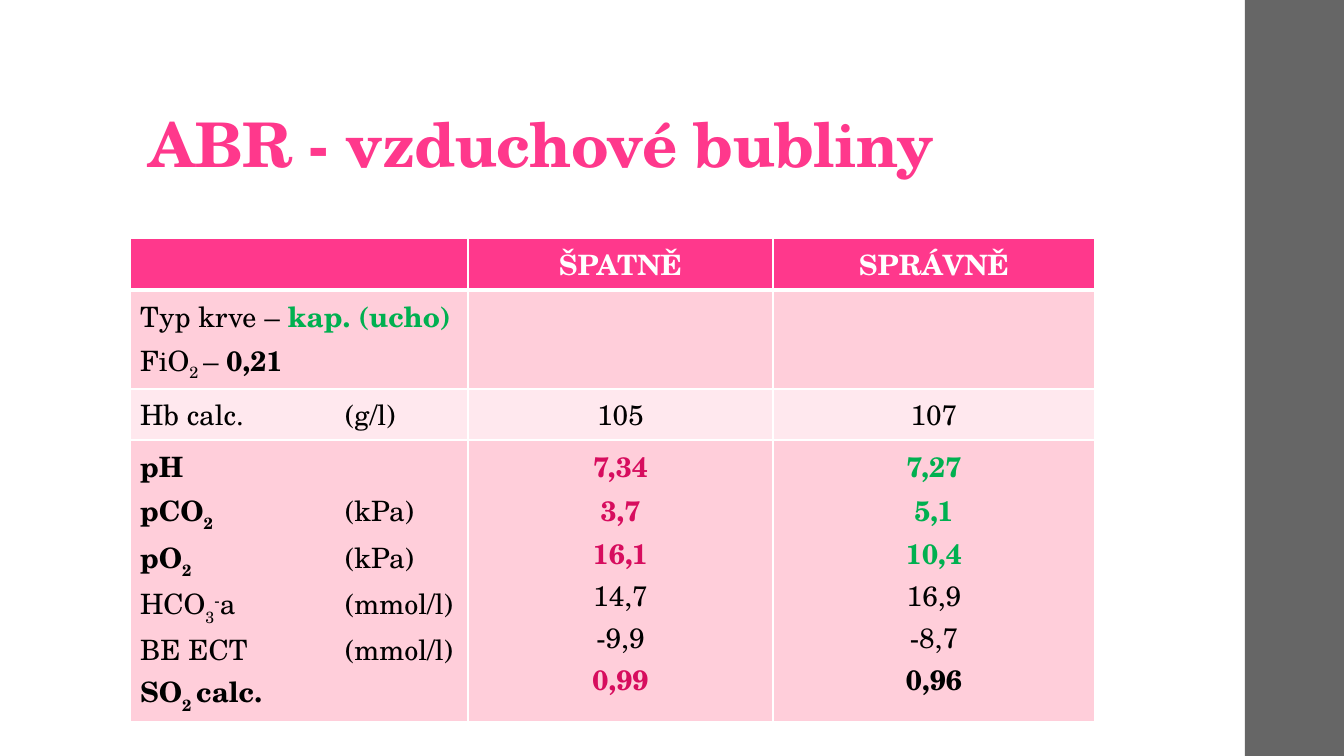
from dataclasses import dataclass

import lxml.etree
import pptx
import pptx.dml.color
import pptx.enum.shapes
import pptx.enum.text
import pptx.oxml.ns
import pptx.util

ALIGN = pptx.enum.text.PP_ALIGN
ANCHOR = pptx.enum.text.MSO_ANCHOR
qn = pptx.oxml.ns.qn


@dataclass(frozen=True)
class Theme:
    font: str = "TeX Gyre Schola"
    pink: str = "FF388C"
    rose: str = "FFCEDA"
    pale: str = "FFE8EE"
    red: str = "D70D5E"
    green: str = "00B050"
    black: str = "000000"
    white: str = "FFFFFF"
    grey: str = "666666"
    title: int = 44
    body: int = 20


THEME = Theme()


@dataclass(frozen=True)
class Span:
    text: str
    bold: bool = False
    color: str = THEME.black
    base: int = 0


@dataclass(frozen=True)
class Row:
    height: int
    fill: str
    cells: list[list[list[Span]]]


def px(count: int) -> int:
    return round(count * 914400 / 100.8)


def rgb(code: str) -> pptx.dml.color.RGBColor:
    return pptx.dml.color.RGBColor.from_string(code)


def assign(target: object, values: dict) -> None:
    for name, value in values.items():
        setattr(target, name, value)


def sub(text: str, bold: bool = False) -> Span:
    return Span(text, bold, base=-30)


def strong(text: str, color: str = THEME.black) -> Span:
    return Span(text, True, color)


def fill_line(line, spans: list[Span], size: int) -> None:
    for span in spans:
        if span.text == "\n":
            line.add_line_break()
            continue
        run = line.add_run()
        run.text = span.text
        assign(run.font, {"name": THEME.font, "size": pptx.util.Pt(size), "bold": span.bold})
        run.font.color.rgb = rgb(span.color)
        if span.base:
            run.font._element.set("baseline", str(span.base * 1000))


def add_tab(line, stop: int) -> None:
    tabs = lxml.etree.SubElement(line._p.get_or_add_pPr(), qn("a:tabLst"))
    lxml.etree.SubElement(tabs, qn("a:tab"), pos=str(px(stop)), algn="l")


def add_edges(cell, widths: dict[str, int]) -> None:
    """Draw the cell's white borders, with widths in points by side."""
    props = cell._tc.get_or_add_tcPr()
    for place, (side, width) in enumerate(widths.items()):
        edge = lxml.etree.Element(qn(f"a:ln{side}"), w=str(pptx.util.Pt(width)))
        paint = lxml.etree.SubElement(edge, qn("a:solidFill"))
        lxml.etree.SubElement(paint, qn("a:srgbClr"), val=THEME.white)
        props.insert(place, edge)


def add_band(slide) -> None:
    kind = pptx.enum.shapes.MSO_SHAPE.RECTANGLE
    band = slide.shapes.add_shape(kind, px(1245), 0, px(99), px(756))
    band.shadow.inherit = False
    band.fill.solid()
    band.fill.fore_color.rgb = rgb(THEME.grey)
    band.line.fill.background()


def add_title(slide, text: str) -> None:
    frame = slide.shapes.add_textbox(px(139), px(29), px(1068), px(157)).text_frame
    assign(frame, {
        "word_wrap": True, "vertical_anchor": ANCHOR.BOTTOM,
        "margin_left": px(10), "margin_right": px(10),
        "margin_top": px(3), "margin_bottom": px(5),
    })
    line = frame.paragraphs[0]
    line.line_spacing = 0.9
    fill_line(line, [strong(text, THEME.pink)], THEME.title)
    line.runs[0].font._element.set("spc", "-50")


def add_grid(slide, widths: list[int], rows: list[Row]) -> None:
    high = sum(row.height for row in rows)
    grid = slide.shapes.add_table(
        len(rows), len(widths), px(130), px(238), px(sum(widths)), px(high)).table
    assign(grid, {"first_row": False, "horz_banding": False})
    for col, width in zip(grid.columns, widths):
        col.width = px(width)
    for r, row in enumerate(rows):
        grid.rows[r].height = px(row.height)
        for c, lines in enumerate(row.cells):
            cell = grid.cell(r, c)
            cell.fill.solid()
            cell.fill.fore_color.rgb = rgb(row.fill)
            add_edges(cell, {"L": 1, "R": 1, "T": 3 if r == 1 else 1, "B": 3 if r == 0 else 1})
            for n, spans in enumerate(lines):
                frame = cell.text_frame
                line = frame.add_paragraph() if n else frame.paragraphs[0]
                line.alignment = ALIGN.CENTER if c else ALIGN.LEFT
                if any("\t" in span.text for span in spans):
                    add_tab(line, 205)
                fill_line(line, spans, THEME.body)


def values(texts: list[str], tones: list[str | None]) -> list[list[Span]]:
    """Give one line per value; a tone of None means plain text."""
    return [[strong(text, tone) if tone else Span(text)] for text, tone in zip(texts, tones)]


BLOOD = [[
    Span("Typ krve – "), strong("kap. (ucho)", THEME.green), Span("\n"),
    Span("FiO"), Span("2 ", base=-25), Span("– "), strong("0,21"),
]]
GASES = [
    [strong("pH")],
    [strong("pCO"), sub("2", True), Span("\t(kPa)")],
    [strong("pO"), sub("2", True), Span("\t(kPa)")],
    [Span("HCO"), sub("3"), Span("-", base=30), Span("a\t(mmol/l)")],
    [Span("BE ECT\t(mmol/l)")],
    [strong("SO"), sub("2 ", True), strong("calc.")],
]
WRONG = values(["7,34", "3,7", "16,1", "14,7", "-9,9", "0,99"],
               [THEME.red] * 3 + [None] * 2 + [THEME.red])
RIGHT = values(["7,27", "5,1", "10,4", "16,9", "-8,7", "0,96"],
               [THEME.green] * 3 + [None] * 2 + [THEME.black])
ROWS = [
    Row(52, THEME.pink, [[], [[strong("ŠPATNĚ", THEME.white)]], [[strong("SPRÁVNĚ", THEME.white)]]]),
    Row(99, THEME.rose, [BLOOD, [], []]),
    Row(51, THEME.pale, [[[Span("Hb calc.\t(g/l)")]], [[Span("105")]], [[Span("107")]]]),
    Row(282, THEME.rose, [GASES, WRONG, RIGHT]),
]


def main() -> None:
    deck = pptx.Presentation()
    assign(deck, {"slide_width": px(1344), "slide_height": px(756)})
    slide = deck.slides.add_slide(deck.slide_layouts[6])
    add_band(slide)
    add_title(slide, "ABR - vzduchové bubliny")
    add_grid(slide, [338, 305, 322], ROWS)
    deck.save("out.pptx")


if __name__ == "__main__":
    main()
